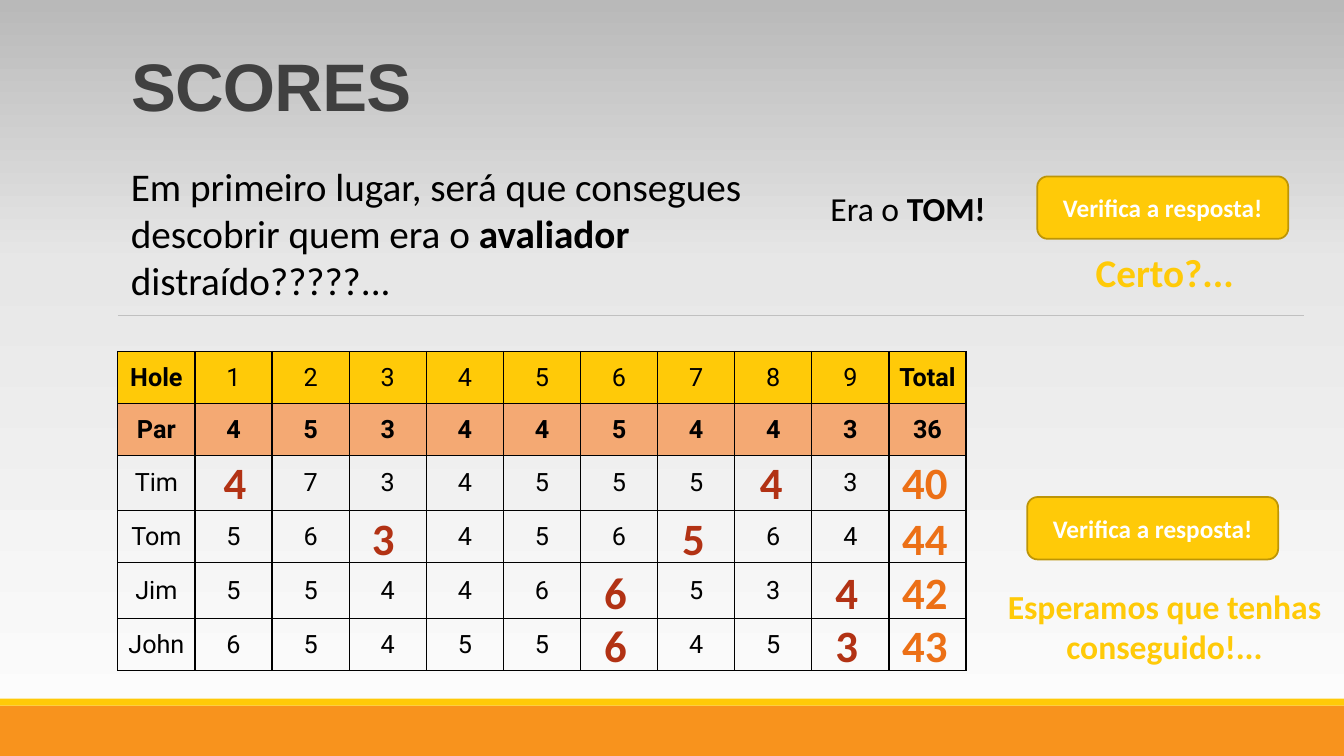
"""Build the golf SCORES slide with its score table and revealed answers."""
import copy

import pptx
import pptx.dml.color
import pptx.enum.dml
import pptx.enum.shapes
import pptx.enum.text
import pptx.oxml
import pptx.oxml.ns
import pptx.util

Pt = pptx.util.Pt
RGB = pptx.dml.color.RGBColor.from_string
SHAPE = pptx.enum.shapes.MSO_SHAPE
ALIGN = pptx.enum.text.PP_ALIGN
ANCHOR = pptx.enum.text.MSO_ANCHOR
qn = pptx.oxml.ns.qn


class Theme:
    heading, body, table = "Arial", "Calibri", "Roboto"
    title_size, answer_size, large, medium, small = 48, 32, 28, 24, 18
    black, white, title = "000000", "FFFFFF", "404040"
    yellow, yellow_edge, orange = "FFCA08", "BD9506", "F8931D"
    par, rule, fix, total = "F4A973", "C0C0C0", "B23214", "EC7016"
    backdrop = [(0, "FEFEFE"), (0.65, "E7E7E7"), (1, "B9B9B9")]


def add_text(box, parts, size, color, align=ALIGN.LEFT, wrap=False):
    """Add a text box whose parts are (text, bold) pairs."""
    sp = s.shapes.add_textbox(*map(Pt, box))
    tf = sp.text_frame
    tf.word_wrap = wrap
    tf.auto_size = pptx.enum.text.MSO_AUTO_SIZE.SHAPE_TO_FIT_TEXT
    p = tf.paragraphs[0]
    p.alignment = align
    for text, bold in parts:
        r = p.add_run()
        r.text = text
        style(r.font, Theme.body, size, color, bold)


def style(font, name, size, color, bold):
    """Apply typeface, size, colour and weight to a font."""
    font.name, font.size, font.bold = name, Pt(size), bold
    font.color.rgb = RGB(color)


prs = pptx.Presentation()
prs.slide_width, prs.slide_height = Pt(960), Pt(540)
s = prs.slides.add_slide(prs.slide_layouts[5])

fill = s.background.fill
fill.gradient()
fill.gradient_angle = 90
stops = s.element.find(".//" + qn("a:gsLst"))
stops.append(copy.deepcopy(stops[-1]))
for stop, (position, color) in zip(fill.gradient_stops, Theme.backdrop):
    stop.position = position
    stop.color.rgb = RGB(color)

for top, height, color in [(504, 36, Theme.orange), (499, 5, Theme.yellow)]:
    sp = s.shapes.add_shape(SHAPE.RECTANGLE, Pt(0), Pt(top), Pt(960), Pt(height))
    sp.shadow.inherit = False
    sp.fill.solid()
    sp.fill.fore_color.rgb = RGB(color)
    sp.line.fill.background()

title = s.shapes.title
title.left, title.top, title.width, title.height = Pt(86.4), Pt(-21.6), Pt(792), Pt(114.5)
tf = title.text_frame
tf.text = "SCORES"
tf.vertical_anchor = ANCHOR.BOTTOM
p = tf.paragraphs[0]
p.alignment = ALIGN.LEFT
p.line_spacing = 0.85
r = p.runs[0]
style(r.font, Theme.heading, Theme.title_size, Theme.title, True)
r.font._element.set("spc", "-50")

divider = s.shapes.add_connector(
    pptx.enum.shapes.MSO_CONNECTOR.STRAIGHT, Pt(84.2), Pt(225.4), Pt(931.5), Pt(225.4))
divider.line.color.rgb = RGB(Theme.rule)
divider.line.width = Pt(0.75)
divider._element.spPr.append(pptx.oxml.parse_xml(
    f'<a:effectLst {pptx.oxml.ns.nsdecls("a")}/>'))

for left, top in [(740.9, 126), (733.7, 355)]:
    sp = s.shapes.add_shape(SHAPE.ROUNDED_RECTANGLE, Pt(left), Pt(top), Pt(179.3), Pt(44.6))
    sp.shadow.inherit = False
    sp.fill.solid()
    sp.fill.fore_color.rgb = RGB(Theme.yellow)
    sp.line.color.rgb = RGB(Theme.yellow_edge)
    sp.line.width = Pt(1.25)
    tf = sp.text_frame
    tf.text = "Verifica a resposta!"
    tf.vertical_anchor = ANCHOR.MIDDLE
    p = tf.paragraphs[0]
    p.alignment = ALIGN.CENTER
    style(p.runs[0].font, Theme.body, Theme.small, Theme.white, True)

add_text((86.4, 112.3, 473, 108.7),
         [("Em primeiro lugar, será que consegues descobrir quem era o ", False),
          ("avaliador", True), (" distraído?????...", False)],
         Theme.large, Theme.black, wrap=True)
add_text((586.1, 131, 126.7, 36), [("Era o ", False), ("TOM!", True)],
         Theme.medium, Theme.black)
add_text((774.7, 173.5, 114.5, 41), [("Certo?...", True)],
         Theme.large, Theme.yellow, ALIGN.CENTER)
add_text((707, 414.7, 249.8, 65.5), [("Esperamos que tenhas conseguido!...", True)],
         Theme.medium, Theme.yellow, ALIGN.CENTER, True)

scores = [
    ["Hole", "1", "2", "3", "4", "5", "6", "7", "8", "9", "Total"],
    ["Par", "4", "5", "3", "4", "4", "5", "4", "4", "3", "36"],
    ["Tim", "", "7", "3", "4", "5", "5", "5", "", "3", ""],
    ["Tom", "5", "6", "", "4", "5", "6", "", "6", "4", ""],
    ["Jim", "5", "5", "4", "4", "6", "", "5", "3", "", ""],
    ["John", "6", "5", "4", "5", "5", "", "4", "5", "", ""],
]
row_heights = [37.2, 37.2, 39.3, 37.2, 40, 37.2]
row_fills = {0: Theme.yellow, 1: Theme.par}
table = s.shapes.add_table(len(scores), len(scores[0]), Pt(84.2), Pt(251),
                           Pt(606.1), Pt(sum(row_heights))).table
table.first_row = table.horz_banding = False
for column in table.columns:
    column.width = Pt(55.1)
for i, (row, height) in enumerate(zip(scores, row_heights)):
    table.rows[i].height = Pt(height)
    for j, text in enumerate(row):
        cell = table.cell(i, j)
        cell.margin_left = cell.margin_right = cell.margin_top = cell.margin_bottom = 0
        cell.vertical_anchor = ANCHOR.MIDDLE
        tc_pr = cell._tc.get_or_add_tcPr()
        for side in ("lnL", "lnR", "lnT", "lnB"):
            tc_pr.append(pptx.oxml.parse_xml(
                f'<a:{side} {pptx.oxml.ns.nsdecls("a")} w="12700"><a:solidFill>'
                f'<a:srgbClr val="{Theme.black}"/></a:solidFill></a:{side}>'))
        if i in row_fills:
            cell.fill.solid()
            cell.fill.fore_color.rgb = RGB(row_fills[i])
        else:
            cell.fill.background()
        p = cell.text_frame.paragraphs[0]
        p.text = text
        p.alignment = ALIGN.CENTER
        bold = i == 1 or text in ("Hole", "Total")
        style(p.font, Theme.table, Theme.small, Theme.black, bold)
        for r in p.runs:
            style(r.font, Theme.table, Theme.small, Theme.black, bold)

answer_left = {1: 152.6, 3: 258.5, 6: 424.4, 7: 480.2, 8: 535.7, 9: 589.7, 10: 637.4}
answers = [
    (321.1, {1: "4", 8: "4", 10: "40"}),
    (361.4, {3: "3", 7: "5", 10: "44"}),
    (399.6, {6: "6", 9: "4", 10: "42"}),
    (437.8, {6: "6", 9: "3", 10: "43"}),
]
for top, row in answers:
    for column, text in row.items():
        width, color = (47.5, Theme.total) if column == 10 else (31, Theme.fix)
        add_text((answer_left[column], top, width, 46), [(text, True)],
                 Theme.answer_size, color)

prs.save("out.pptx")
